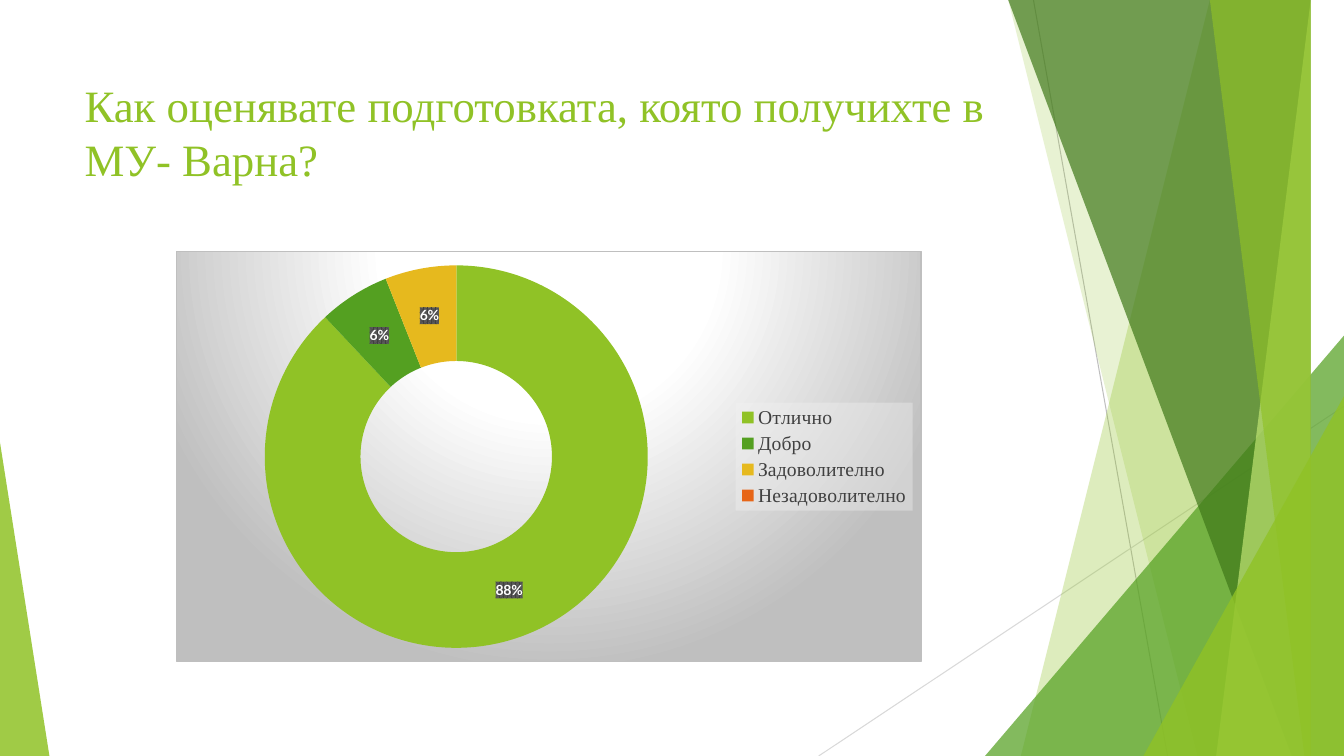
from dataclasses import dataclass

from lxml import etree
from pptx import Presentation
from pptx.chart.data import CategoryChartData
from pptx.dml.color import RGBColor
from pptx.enum.chart import XL_CHART_TYPE, XL_LEGEND_POSITION
from pptx.enum.shapes import MSO_CONNECTOR, MSO_SHAPE
from pptx.enum.text import MSO_ANCHOR
from pptx.oxml import parse_xml
from pptx.oxml.ns import qn
from pptx.util import Inches, Pt

DOUGHNUT = XL_CHART_TYPE.DOUGHNUT
LEGEND_RIGHT = XL_LEGEND_POSITION.RIGHT
STRAIGHT = MSO_CONNECTOR.STRAIGHT
TRIANGLE = MSO_SHAPE.ISOSCELES_TRIANGLE
TOP = MSO_ANCHOR.TOP

CELL = Inches(1)
COLS, ROWS = 13.33, 7.5
BLANK = 6


@dataclass(frozen=True)
class Theme:
    lime: str = "90C226"
    green: str = "54A021"
    forest: str = "3F7819"
    pale: str = "C0E474"
    gold: str = "E6B91E"
    orange: str = "E76618"
    white: str = "FFFFFF"
    black: str = "000000"
    ink: str = "404040"
    slate: str = "595959"
    mist: str = "F2F2F2"
    silver: str = "BFBFBF"
    light: str = "D9D9D9"
    serif: str = "Times New Roman"
    sans: str = "Lato"
    title_size: int = 32
    legend_size: int = 14
    label_size: int = 10
    hairline: float = 0.75


T = Theme()

SHEETS = [
    (12.28, 10.04, T.lime, 30),
    (10.5, 11.83, T.lime, 20),
    (10.21, 12.91, T.forest, 70),
    (13.03, 11.92, T.pale, 70),
    (11.96, 13.18, T.lime, 65),
]
RATINGS = [
    ("Отлично", 88, T.lime),
    ("Добро", 6, T.green),
    ("Задоволително", 6, T.gold),
    ("Незадоволително", None, T.orange),
]


def grid(*cells):
    return [round(c * CELL) for c in cells]


def rgb(value):
    return RGBColor.from_string(value)


def set_font(font, name, size, color, bold=False):
    font.name, font.size, font.bold = name, Pt(size), bold
    font.color.rgb = rgb(color)


def paint(sp, color, opacity):
    sp.shadow.inherit = False
    sp.fill.solid()
    sp.fill.fore_color.rgb = rgb(color)
    clr = sp.fill._xPr.find(qn("a:solidFill"))[0]
    etree.SubElement(clr, qn("a:alpha")).set("val", str(opacity * 1000))
    sp.line.fill.background()


def add_line(s, start, end, color):
    line = s.shapes.add_connector(STRAIGHT, *grid(*start, *end))
    line.line.color.rgb = rgb(color)
    line.line.width = Pt(T.hairline)
    etree.SubElement(line._element.spPr, qn("a:effectLst"))


def add_sheet(s, top_x, bottom_x, color, opacity):
    builder = s.shapes.build_freeform(top_x, -0.01, scale=CELL)
    builder.add_line_segments([(COLS, -0.01), (COLS, ROWS), (bottom_x, ROWS)])
    paint(builder.convert_to_shape(), color, opacity)


def add_corner(s, left, width, height, apex, color, opacity):
    sp = s.shapes.add_shape(TRIANGLE, *grid(left, ROWS - height, width, height))
    sp.adjustments[0] = apex
    paint(sp, color, opacity)


def add_title(s, text):
    tf = s.shapes.add_textbox(*grid(0.74, 0.67, 9.4, 1.44)).text_frame
    tf.word_wrap = True
    tf.vertical_anchor = TOP
    tf.margin_top = Inches(0.1)
    p = tf.paragraphs[0]
    p.text = text
    set_font(p.font, T.serif, T.title_size, T.lime)


def set_backdrop(parent, content):
    xml = (
        '<c:spPr xmlns:c="http://schemas.openxmlformats.org/drawingml/2006/chart"'
        ' xmlns:a="http://schemas.openxmlformats.org/drawingml/2006/main">'
        f"{content}</c:spPr>"
    )
    parent.find(qn("c:txPr")).addprevious(parse_xml(xml))


def color_xml(value, inner=""):
    return f'<a:srgbClr val="{value}">{inner}</a:srgbClr>'


def spotlight_xml():
    stops = "".join(
        f'<a:gs pos="{pos * 1000}">{color_xml(color)}</a:gs>'
        for pos, color in ((0, T.white), (39, T.white), (100, T.silver))
    )
    return (
        f'<a:gradFill><a:gsLst>{stops}</a:gsLst><a:path path="circle">'
        '<a:fillToRect l="50000" t="-80000" r="50000" b="180000"/></a:path></a:gradFill>'
        f'<a:ln w="{Pt(T.hairline)}"><a:solidFill>{color_xml(T.silver)}</a:solidFill></a:ln>'
    )


def pattern_xml():
    return (
        f'<a:pattFill prst="pct75"><a:fgClr>{color_xml(T.ink)}</a:fgClr>'
        f"<a:bgClr>{color_xml(T.slate)}</a:bgClr></a:pattFill>"
    )


def veil_xml():
    alpha = '<a:alpha val="39000"/>'
    return f"<a:solidFill>{color_xml(T.mist, alpha)}</a:solidFill>"


def add_ratings_chart(s):
    data = CategoryChartData()
    data.categories = [name for name, _, _ in RATINGS]
    data.add_series("Series 1", [value for _, value, _ in RATINGS])
    chart = s.shapes.add_chart(DOUGHNUT, *grid(1.75, 2.49, 7.39, 4.08), data).chart
    chart.has_title = False
    set_font(chart.font, T.sans, T.label_size, T.black)
    set_backdrop(chart._chartSpace, spotlight_xml())

    chart.has_legend = True
    legend = chart.legend
    legend.position = LEGEND_RIGHT
    legend.include_in_layout = False
    set_font(legend.font, T.serif, T.legend_size, T.ink)
    set_backdrop(legend._element, veil_xml())

    plot = chart.plots[0]
    plot.vary_by_categories = True
    series = plot.series[0]
    for i, (_, _, color) in enumerate(RATINGS):
        fmt = series.points[i].format
        fmt.fill.solid()
        fmt.fill.fore_color.rgb = rgb(color)
        fmt.line.fill.background()

    labels = series.data_labels
    labels.show_percentage = True
    labels.show_value = False
    labels.number_format = "0%"
    labels.number_format_is_linked = False
    set_font(labels.font, T.sans, T.label_size, T.white, bold=True)
    set_backdrop(labels._element, pattern_xml())


def main():
    prs = Presentation()
    prs.slide_width, prs.slide_height = grid(COLS, ROWS)
    s = prs.slides.add_slide(prs.slide_layouts[BLANK])
    add_line(s, (10.25, 0), (11.58, ROWS), T.silver)
    add_line(s, (COLS, 4.03), (8.12, ROWS), T.light)
    for sheet in SHEETS[:2]:
        add_sheet(s, *sheet)
    add_corner(s, 9.77, 3.56, 4.17, 1, T.green, 72)
    for sheet in SHEETS[2:]:
        add_sheet(s, *sheet)
    add_corner(s, 11.34, 1.99, 3.57, 1, T.lime, 80)
    add_corner(s, 0, 0.49, 3.11, 0, T.lime, 85)
    add_title(s, "Как оценявате подготовката, която получихте в МУ- Варна?")
    add_ratings_chart(s)
    prs.save("out.pptx")


if __name__ == "__main__":
    main()
